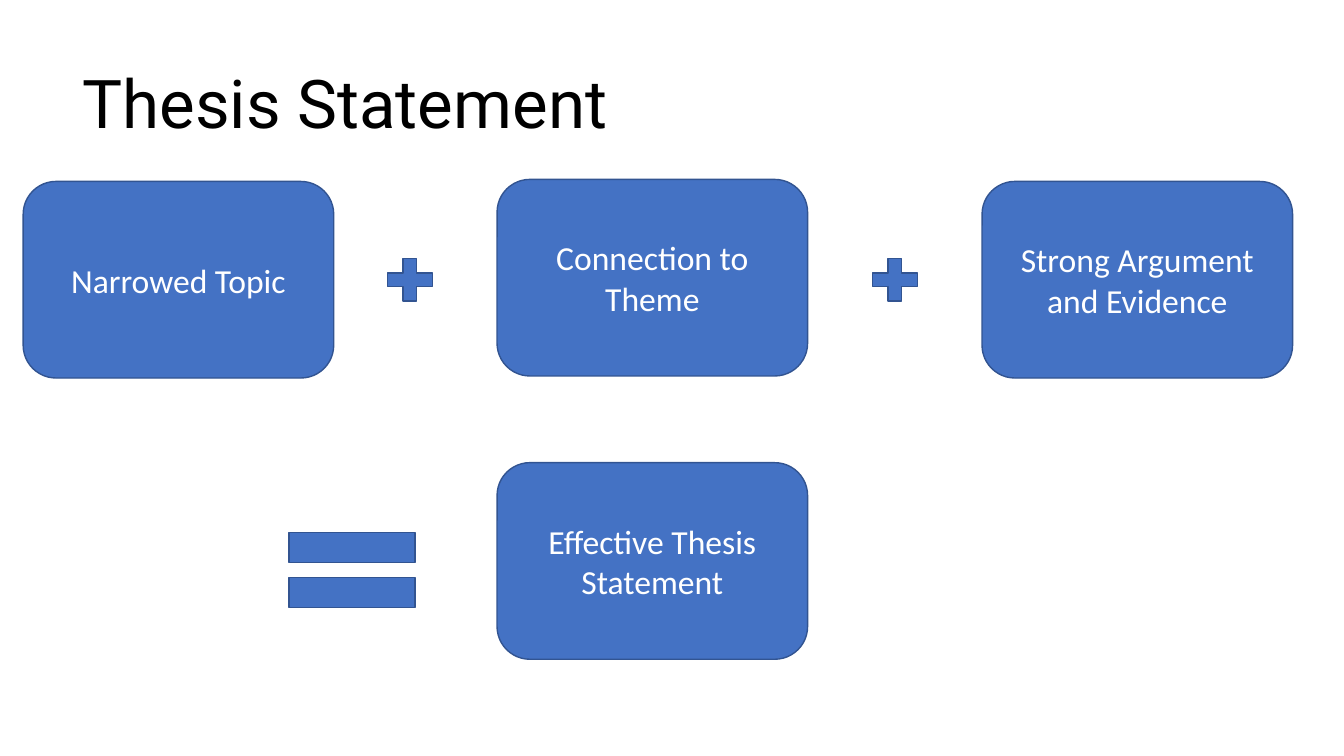
from pptx import Presentation
from pptx import util as u
from pptx.dml import color
from pptx.enum import shapes, text

BLUE = color.RGBColor(0x44, 0x72, 0xC4)
NAVY = color.RGBColor(0x32, 0x54, 0x91)
WHITE = color.RGBColor(0xFF, 0xFF, 0xFF)
BLACK = color.RGBColor(0x00, 0x00, 0x00)


def write_text(frame, wording, *, size, font, ink, align, spacing=1.0):
    frame.word_wrap = True
    frame.auto_size = text.MSO_AUTO_SIZE.NONE
    frame.vertical_anchor = text.MSO_ANCHOR.MIDDLE
    para = frame.paragraphs[0]
    para.alignment = align
    para.line_spacing = spacing
    span = para.add_run()
    span.text = wording
    span.font.size = u.Pt(size)
    span.font.name = font
    span.font.color.rgb = ink


def add_blue_shape(page, kind, left, top, width, height):
    shape = page.shapes.add_shape(
        kind, u.Inches(left), u.Inches(top), u.Inches(width), u.Inches(height))
    shape.shadow.inherit = False
    shape.fill.solid()
    shape.fill.fore_color.rgb = BLUE
    shape.line.color.rgb = NAVY
    shape.line.width = u.Pt(1)
    return shape


deck = Presentation()
deck.slide_width = u.Inches(13.33)
deck.slide_height = u.Inches(7.5)
page = deck.slides.add_slide(deck.slide_layouts[5])

title = page.shapes.title
title.left, title.top = u.Inches(0.72), u.Inches(0.33)
title.width, title.height = u.Inches(11.5), u.Inches(1.45)
write_text(title.text_frame, "Thesis Statement", size=48, font="Roboto",
           ink=BLACK, align=text.PP_ALIGN.LEFT, spacing=0.9)

ideas = [
    ("Narrowed Topic", 0.23, 1.8),
    ("Strong Argument and Evidence", 9.74, 1.8),
    ("Connection to Theme", 4.93, 1.78),
    ("Effective Thesis Statement", 4.93, 4.59),
]
for wording, left, top in ideas:
    box = add_blue_shape(page, shapes.MSO_SHAPE.ROUNDED_RECTANGLE,
                         left, top, 3.08, 1.95)
    write_text(box.text_frame, wording, size=24, font="Calibri",
               ink=WHITE, align=text.PP_ALIGN.CENTER)

for left in (3.76, 8.57):
    add_blue_shape(page, shapes.MSO_SHAPE.MATH_PLUS, left, 2.49, 0.61, 0.57)
add_blue_shape(page, shapes.MSO_SHAPE.MATH_EQUAL, 2.64, 5.02, 1.7, 1.27)

deck.save("out.pptx")
